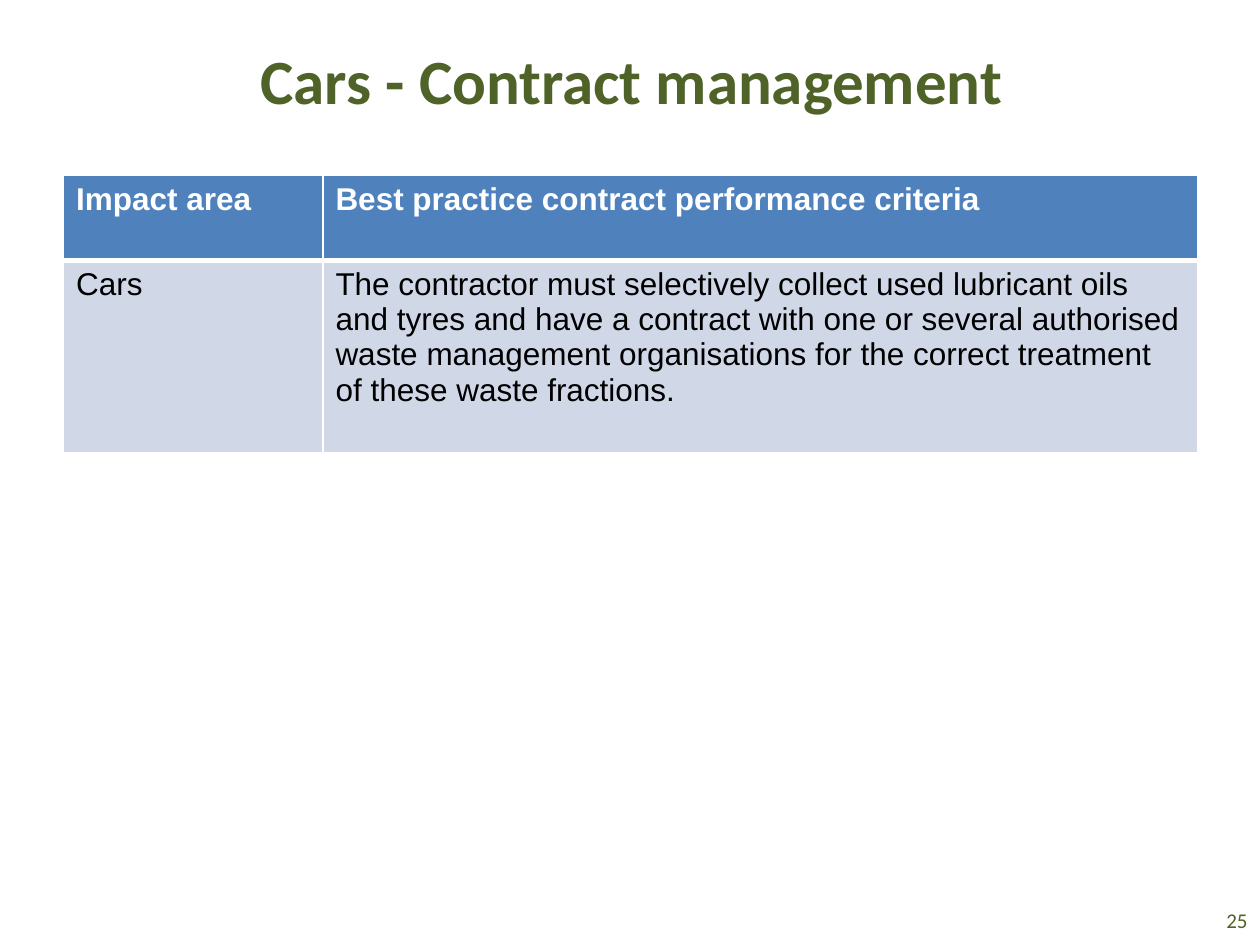
from lxml.etree import SubElement
from pptx import Presentation
from pptx.dml.color import RGBColor
from pptx.enum.text import MSO_ANCHOR as Anchor, PP_ALIGN as Align
from pptx.oxml.ns import qn
from pptx.util import Cm, Pt

GREEN = "4F6228"
WHITE = "FFFFFF"
BLACK = "000000"
HEADER_FILL = "4F81BD"
BODY_FILL = "D0D8E8"

COLUMN_WIDTHS = [5.23, 17.63]
ROW_HEIGHTS = [1.71, 3.87]
ROWS = [
    ["Impact area", "Best practice contract performance criteria"],
    ["Cars",
     "The contractor must selectively collect used lubricant oils and tyres "
     "and have a contract with one or several authorised waste management "
     "organisations for the correct treatment of these waste fractions."],
]


def color(value):
    return RGBColor.from_string(value)


def write_text(frame, text, *, size, font, fill, bold=False, align=Align.LEFT):
    frame.word_wrap = True
    paragraph = frame.paragraphs[0]
    paragraph.alignment = align
    run = paragraph.add_run()
    run.text = text
    run.font.size = Pt(size)
    run.font.name = font
    run.font.bold = bold
    run.font.color.rgb = color(fill)


def add_text(slide, text, left, top, width, height, **style):
    shape = slide.shapes.add_textbox(Cm(left), Cm(top), Cm(width), Cm(height))
    shape.text_frame.vertical_anchor = Anchor.MIDDLE
    write_text(shape.text_frame, text, **style)


def set_borders(cell, **widths):
    properties = cell._tc.get_or_add_tcPr()
    for side in ("L", "R", "T", "B"):
        line = SubElement(properties, qn(f"a:ln{side}"),
                          w=str(Pt(widths.get(side, 1))))
        solid = SubElement(line, qn("a:solidFill"))
        SubElement(solid, qn("a:srgbClr"), val=WHITE)


def add_criteria_table(slide, left, top):
    table = slide.shapes.add_table(
        len(ROWS), len(COLUMN_WIDTHS), Cm(left), Cm(top),
        Cm(sum(COLUMN_WIDTHS)), Cm(sum(ROW_HEIGHTS))).table
    for column, width in zip(table.columns, COLUMN_WIDTHS):
        column.width = Cm(width)
    for row, height, texts in zip(table.rows, ROW_HEIGHTS, ROWS):
        row.height = Cm(height)
        header = texts is ROWS[0]
        for cell, text in zip(row.cells, texts):
            # The rule between header and body is thicker
            set_borders(cell, **{"B" if header else "T": 3})
            cell.fill.solid()
            cell.fill.fore_color.rgb = color(HEADER_FILL if header else BODY_FILL)
            write_text(cell.text_frame, text, size=18, font="Arial",
                       fill=WHITE if header else BLACK, bold=header)


def main():
    presentation = Presentation()
    presentation.slide_width = Cm(25.4)
    presentation.slide_height = Cm(19.05)
    slide = presentation.slides.add_slide(presentation.slide_layouts[6])

    # Page number
    add_text(slide, "25", 23.47, 18.03, 1.93, 1.02, size=12,
             font="Calibri", fill=GREEN, align=Align.RIGHT)
    # Title
    add_text(slide, "Cars - Contract management", 1.3, 0, 22.86, 3.18, size=36,
             font="Calibri", fill=GREEN, bold=True, align=Align.CENTER)
    # Criteria table
    add_criteria_table(slide, 1.28, 3.54)

    presentation.save("out.pptx")


if __name__ == "__main__":
    main()
